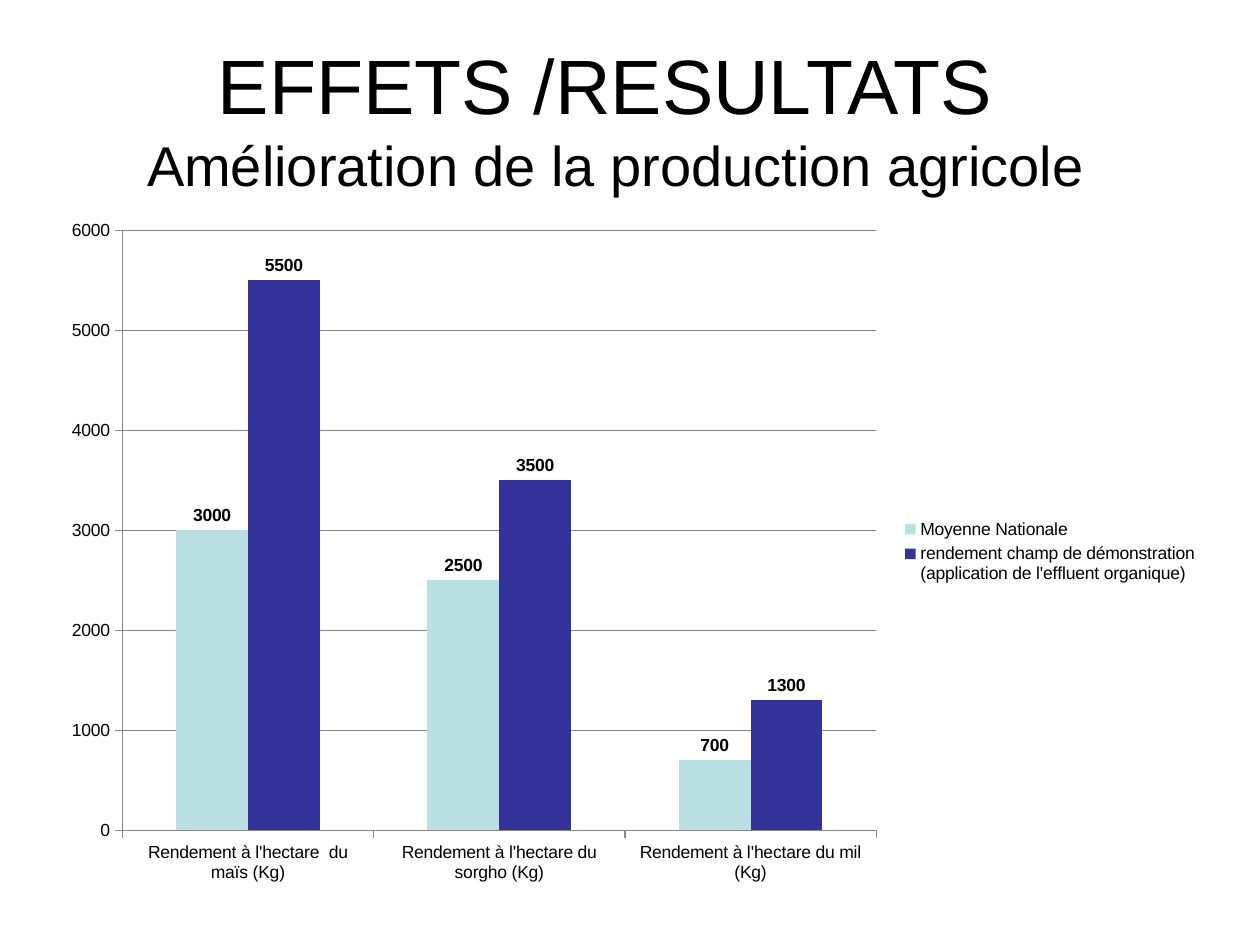
from dataclasses import dataclass

from lxml.etree import SubElement
from pptx import Presentation
from pptx.chart.chart import Chart
from pptx.chart.data import CategoryChartData
from pptx.dml.color import RGBColor
from pptx.enum.chart import XL_CHART_TYPE, XL_LABEL_POSITION, XL_LEGEND_POSITION, XL_TICK_MARK
from pptx.enum.text import MSO_ANCHOR, PP_ALIGN
from pptx.oxml.ns import qn
from pptx.slide import Slide
from pptx.util import Inches, Pt

WIDTH, HEIGHT = Inches(10), Inches(7.5)
FONT, BLACK, GREY = "Arial", "000000", "878787"


@dataclass(frozen=True)
class Area:
    """A rectangle in shares of its container."""
    left: float
    top: float
    width: float
    height: float

    def on_slide(self) -> tuple[int, int, int, int]:
        """Return the rectangle in slide units."""
        return (int(self.left * WIDTH), int(self.top * HEIGHT),
                int(self.width * WIDTH), int(self.height * HEIGHT))


@dataclass(frozen=True)
class TitleLine:
    """One line of the title."""
    text: str
    size: int


@dataclass(frozen=True)
class YieldSeries:
    """The yields of one kind of field."""
    name: str
    values: tuple[int, ...]
    fill: str


TITLE_AREA = Area(0.039, 0.041, 0.9, 0.167)
CHART_AREA = Area(0.039, 0.219, 0.922, 0.729)
PLOT_AREA = Area(0.063, 0.034, 0.649, 0.871)
TITLE = (TitleLine("EFFETS /RESULTATS ", 44),
         TitleLine("Amélioration de la production agricole", 32))
CROPS = ("Rendement à l'hectare  du maïs (Kg)",
         "Rendement à l'hectare du sorgho (Kg)",
         "Rendement à l'hectare du mil (Kg)")
YIELDS = (
    YieldSeries("Moyenne Nationale", (3000, 2500, 700), "BBE0E3"),
    YieldSeries("rendement champ de démonstration (application de l'effluent organique)",
                (5500, 3500, 1300), "333399"),
)


def colour(code: str) -> RGBColor:
    """Turn a hex string into a colour."""
    return RGBColor.from_string(code)


def apply(target: object, values: dict[str, object]) -> None:
    """Set each named attribute of the target."""
    for name, value in values.items():
        setattr(target, name, value)


def style_font(font: object, size: int, bold: bool = False) -> None:
    """Give a font the slide's typeface and colour."""
    apply(font, {"name": FONT, "size": Pt(size), "bold": bold})
    font.color.rgb = colour(BLACK)


def add_title(page: Slide) -> None:
    """Write the title lines in one centred paragraph."""
    frame = page.shapes.add_textbox(*TITLE_AREA.on_slide()).text_frame
    apply(frame, {"word_wrap": True, "vertical_anchor": MSO_ANCHOR.MIDDLE})
    para = frame.paragraphs[0]
    para.alignment = PP_ALIGN.CENTER
    for index, line in enumerate(TITLE):
        if index:
            para.add_line_break()
        span = para.add_run()
        span.text = line.text
        style_font(span.font, line.size)


def place_plot(chart: Chart, area: Area) -> None:
    """Fix the inner plot rectangle within the chart."""
    plot_area = chart._chartSpace.chart.plotArea
    for old in plot_area.findall(qn("c:layout")):
        plot_area.remove(old)
    layout = SubElement(plot_area, qn("c:layout"))
    plot_area.insert(0, layout)
    manual = SubElement(layout, qn("c:manualLayout"))
    settings = {"layoutTarget": "inner", "xMode": "edge", "yMode": "edge",
                "x": area.left, "y": area.top, "w": area.width, "h": area.height}
    for tag, value in settings.items():
        SubElement(manual, qn(f"c:{tag}")).set("val", str(value))


def style_axes(chart: Chart) -> None:
    """Draw thin grey axes and gridlines."""
    value_axis, category_axis = chart.value_axis, chart.category_axis
    apply(value_axis, {"minimum_scale": 0, "maximum_scale": 6000, "major_unit": 1000,
                       "has_major_gridlines": True})
    for axis in (value_axis, category_axis):
        apply(axis, {"major_tick_mark": XL_TICK_MARK.OUTSIDE,
                     "minor_tick_mark": XL_TICK_MARK.NONE})
        style_font(axis.tick_labels.font, 10)
    for part in (value_axis, category_axis, value_axis.major_gridlines):
        part.format.line.color.rgb = colour(GREY)
        part.format.line.width = Pt(0.75)


def add_yield_chart(page: Slide) -> None:
    """Add the clustered columns with labels and legend."""
    data = CategoryChartData(number_format="General")
    data.categories = CROPS
    for item in YIELDS:
        data.add_series(item.name, item.values)
    chart = page.shapes.add_chart(
        XL_CHART_TYPE.COLUMN_CLUSTERED, *CHART_AREA.on_slide(), data).chart
    apply(chart, {"has_title": False, "has_legend": True})
    style_font(chart.font, 10)
    apply(chart.legend, {"position": XL_LEGEND_POSITION.RIGHT, "include_in_layout": False})
    style_font(chart.legend.font, 10)
    plot = chart.plots[0]
    apply(plot, {"gap_width": 150, "overlap": 0, "vary_by_categories": False})
    for series, item in zip(plot.series, YIELDS):
        series.format.fill.solid()
        series.format.fill.fore_color.rgb = colour(item.fill)
        labels = series.data_labels
        apply(labels, {"show_value": True, "position": XL_LABEL_POSITION.OUTSIDE_END})
        style_font(labels.font, 10, bold=True)
    style_axes(chart)
    place_plot(chart, PLOT_AREA)


def main() -> None:
    """Build and save the slide."""
    deck = Presentation()
    apply(deck, {"slide_width": WIDTH, "slide_height": HEIGHT})
    page = deck.slides.add_slide(deck.slide_layouts[6])
    add_title(page)
    add_yield_chart(page)
    deck.save("out.pptx")


if __name__ == "__main__":
    main()
